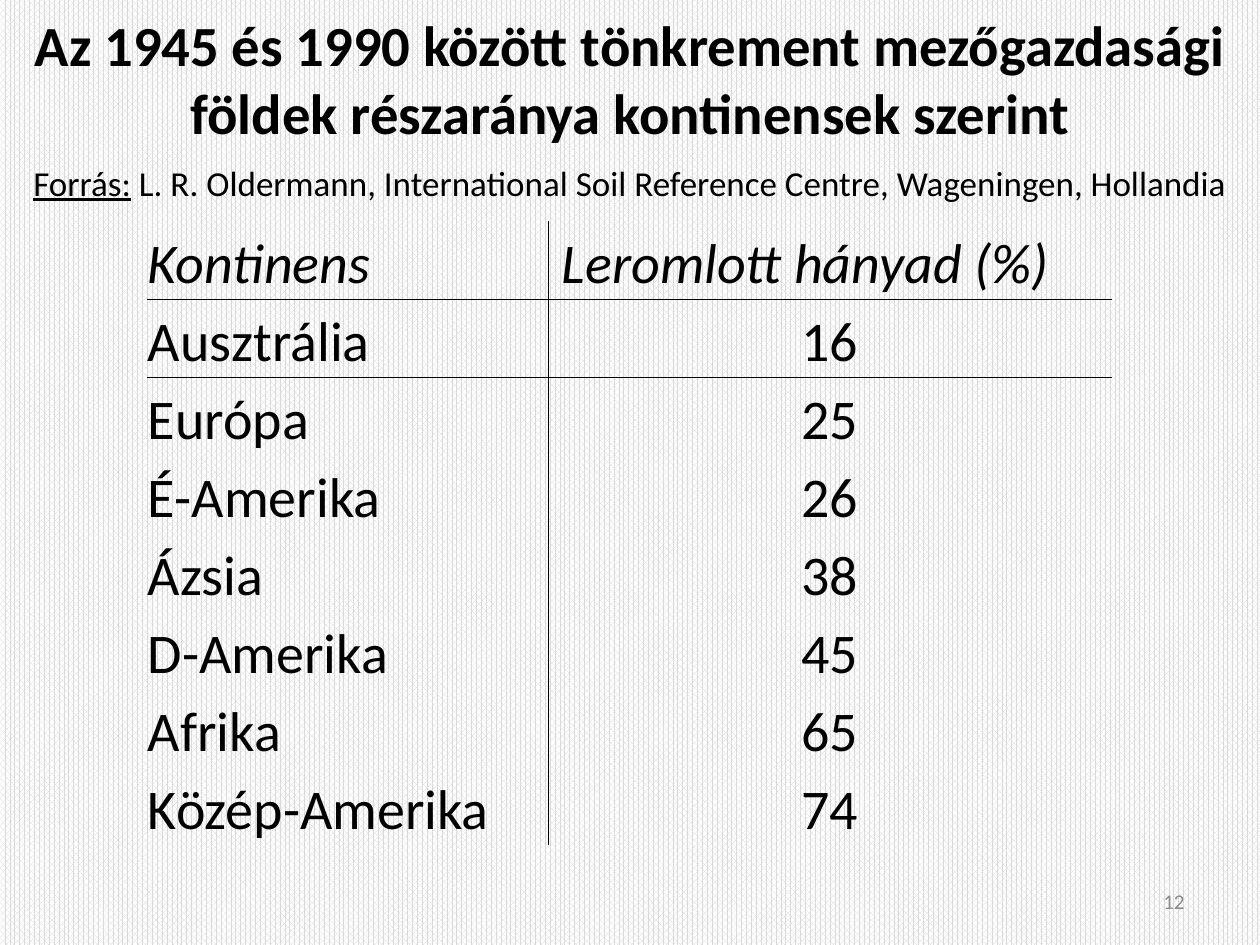
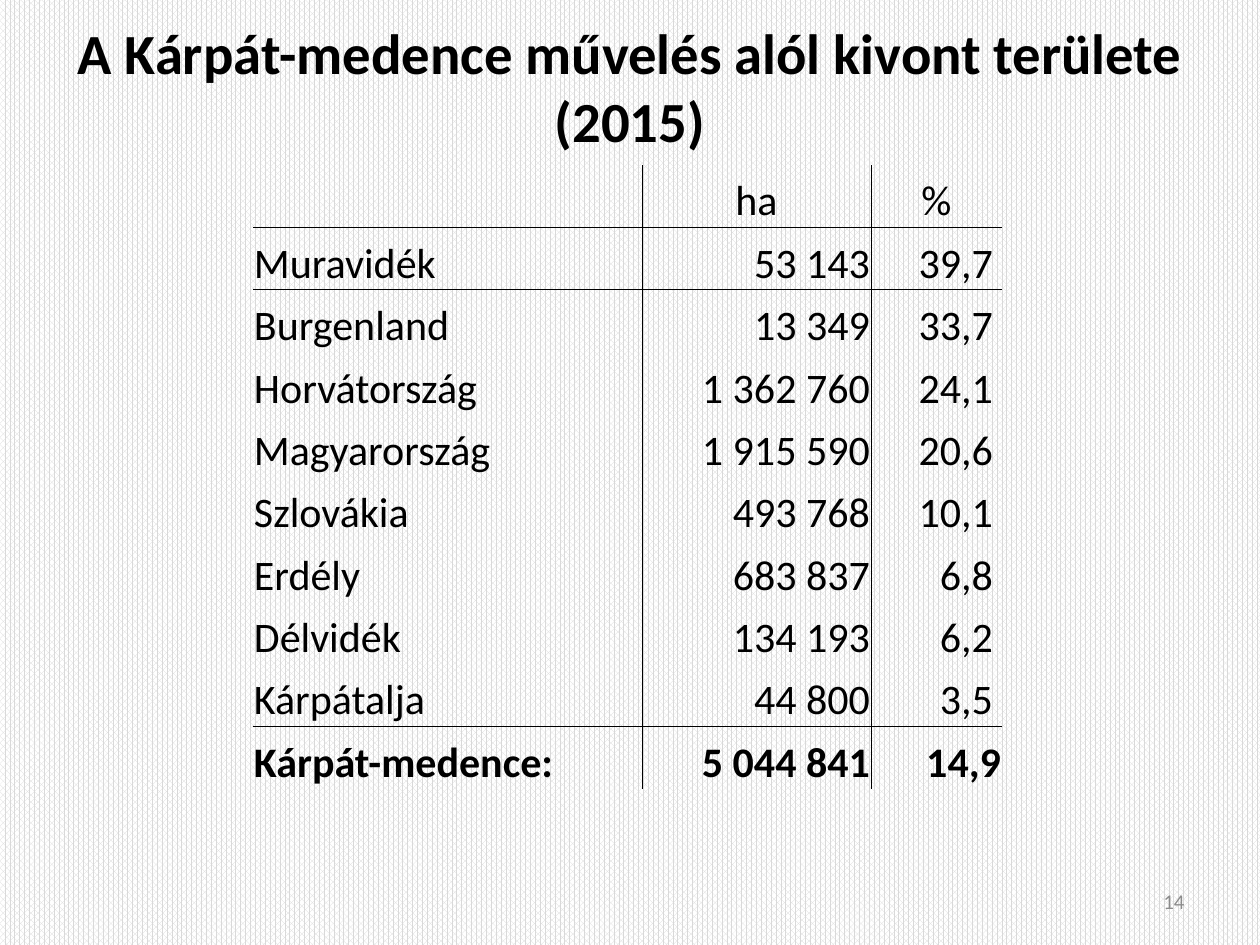
from pptx import Presentation, util as u
from pptx.dml.color import RGBColor
from pptx.enum import dml, text
from pptx.oxml.ns import qn
from lxml import etree

BLACK = RGBColor(0x00, 0x00, 0x00)
WHITE = RGBColor(0xFF, 0xFF, 0xFF)
GREY = RGBColor(0x8C, 0x8C, 0x8C)
STRIPE = RGBColor(0xD9, 0xD9, 0xD9)

PX_PER_INCH = 126
SLIDE_W, SLIDE_H = 1260, 945
FONT = "Calibri"
NO_GRID_STYLE = "{2D5ABB26-0587-4C30-8999-92F81FD0307C}"
LEFT, CENTER, RIGHT = text.PP_ALIGN.LEFT, text.PP_ALIGN.CENTER, text.PP_ALIGN.RIGHT

TITLE = dict(size=u.Pt(32.4), bold=True)
SOURCE = dict(size=u.Pt(20))
NUMBER = dict(size=u.Pt(12))


def px(n):
    return u.Inches(n / PX_PER_INCH)


def set_attrs(target, values):
    for name, value in values.items():
        setattr(target, name, value)


def add_run(p, content, fmt, color=BLACK):
    r = p.add_run()
    r.text = content
    set_attrs(r.font, dict(name=FONT, **fmt))
    r.font.color.rgb = color


def add_text(s, box, runs, align=CENTER, anchor=text.MSO_ANCHOR.MIDDLE, color=BLACK):
    tf = s.shapes.add_textbox(*map(px, box)).text_frame
    set_attrs(tf, dict(word_wrap=True, vertical_anchor=anchor))
    p = tf.paragraphs[0]
    p.alignment = align
    for content, fmt in runs:
        add_run(p, content, fmt, color)


def add_border(cell, side):
    ln = etree.SubElement(cell._tc.get_or_add_tcPr(), qn(f"a:ln{side}"), w=str(u.Pt(0.5)))
    fill = etree.SubElement(ln, qn("a:solidFill"))
    etree.SubElement(fill, qn("a:srgbClr"), val=str(BLACK))


def add_grid(s, box, widths, rows, ruled_rows, style):
    """Table with lines between columns and below each of ruled_rows.

    style(row, column) gives alignment, font, left and right margin, line spacing.
    """
    tbl = s.shapes.add_table(len(rows), len(widths), *map(px, box)).table
    set_attrs(tbl, dict(first_row=False, horz_banding=False))
    tbl._tbl.tblPr.find(qn("a:tableStyleId")).text = NO_GRID_STYLE
    for column, width in zip(tbl.columns, widths):
        column.width = px(width)

    for i, row in enumerate(rows):
        for j, content in enumerate(row):
            cell = tbl.cell(i, j)
            edges = dict(L=j > 0, R=j < len(widths) - 1,
                         T=i - 1 in ruled_rows, B=i in ruled_rows)
            for side, drawn in edges.items():
                if drawn:
                    add_border(cell, side)
            cell.fill.background()

            align, fmt, left, right, spacing = style(i, j)
            set_attrs(cell, dict(margin_left=px(left), margin_right=px(right),
                                 margin_top=px(1), margin_bottom=0,
                                 vertical_anchor=text.MSO_ANCHOR.BOTTOM))
            p = cell.text_frame.paragraphs[0]
            set_attrs(p, dict(alignment=align, line_spacing=spacing))
            if content:
                add_run(p, content, fmt)


def new_slide(prs, title, title_box, number):
    """Striped background, title and slide number."""
    s = prs.slides.add_slide(prs.slide_layouts[6])
    fill = s.background.fill
    fill.patterned()
    fill.pattern = dml.MSO_PATTERN.PERCENT_75
    fill.fore_color.rgb, fill.back_color.rgb = STRIPE, WHITE
    add_text(s, title_box, [(title, TITLE)])
    add_text(s, (903, 876, 294, 50), [(number, NUMBER)], align=RIGHT, color=GREY)
    return s


def continents_slide(prs):
    s = new_slide(prs, "Az 1945 és 1990 között tönkrement mezőgazdasági "
                  "földek részaránya kontinensek szerint", (0, 0, SLIDE_W, 155), "12")

    # Source line
    add_text(s, (0, 155, SLIDE_W, 774), [
        ("Forrás:", dict(SOURCE, underline=True)),
        (" L. R. Oldermann, International Soil Reference Centre, Wageningen, Hollandia", SOURCE),
    ], anchor=text.MSO_ANCHOR.TOP)

    # Share of degraded land
    rows = [("Kontinens", "Leromlott hányad (%)"), ("Ausztrália", "16"), ("Európa", "25"),
            ("É-Amerika", "26"), ("Ázsia", "38"), ("D-Amerika", "45"),
            ("Afrika", "65"), ("Közép-Amerika", "74")]

    def style(i, j):
        header, value = i == 0, j == 1
        return (CENTER if value and not header else LEFT,
                dict(size=u.Pt(32), italic=header),
                14 if value and header else 1, 1, 1.0)

    add_grid(s, (147, 221, 965, 624), (401, 564), rows, {0}, style)


def basin_slide(prs):
    s = new_slide(prs, "A Kárpát-medence művelés alól kivont területe (2015)",
                  (0, 16, SLIDE_W, 139), "14")

    # Area taken out of cultivation
    rows = [("", "ha", "%"), ("Muravidék", "53 143", "39,7"), ("Burgenland", "13 349", "33,7"),
            ("Horvátország", "1 362 760", "24,1"), ("Magyarország", "1 915 590", "20,6"),
            ("Szlovákia", "493 768", "10,1"), ("Erdély", "683 837", "6,8"),
            ("Délvidék", "134 193", "6,2"), ("Kárpátalja", "44 800", "3,5"),
            ("Kárpát-medence:", "5 044 841", "14,9")]
    total = len(rows) - 1

    def style(i, j):
        align = LEFT if j == 0 else CENTER if i == 0 else RIGHT
        right = 9 if j == 2 and 0 < i < total else 1
        return align, dict(size=u.Pt(24), bold=i == total), 1, right, 1.14

    add_grid(s, (253, 165, 749, 624), (389, 229, 131), rows, {0, total - 1}, style)


def main():
    prs = Presentation()
    set_attrs(prs, dict(slide_width=px(SLIDE_W), slide_height=px(SLIDE_H)))
    continents_slide(prs)
    basin_slide(prs)
    prs.save("out.pptx")


if __name__ == "__main__":
    main()
